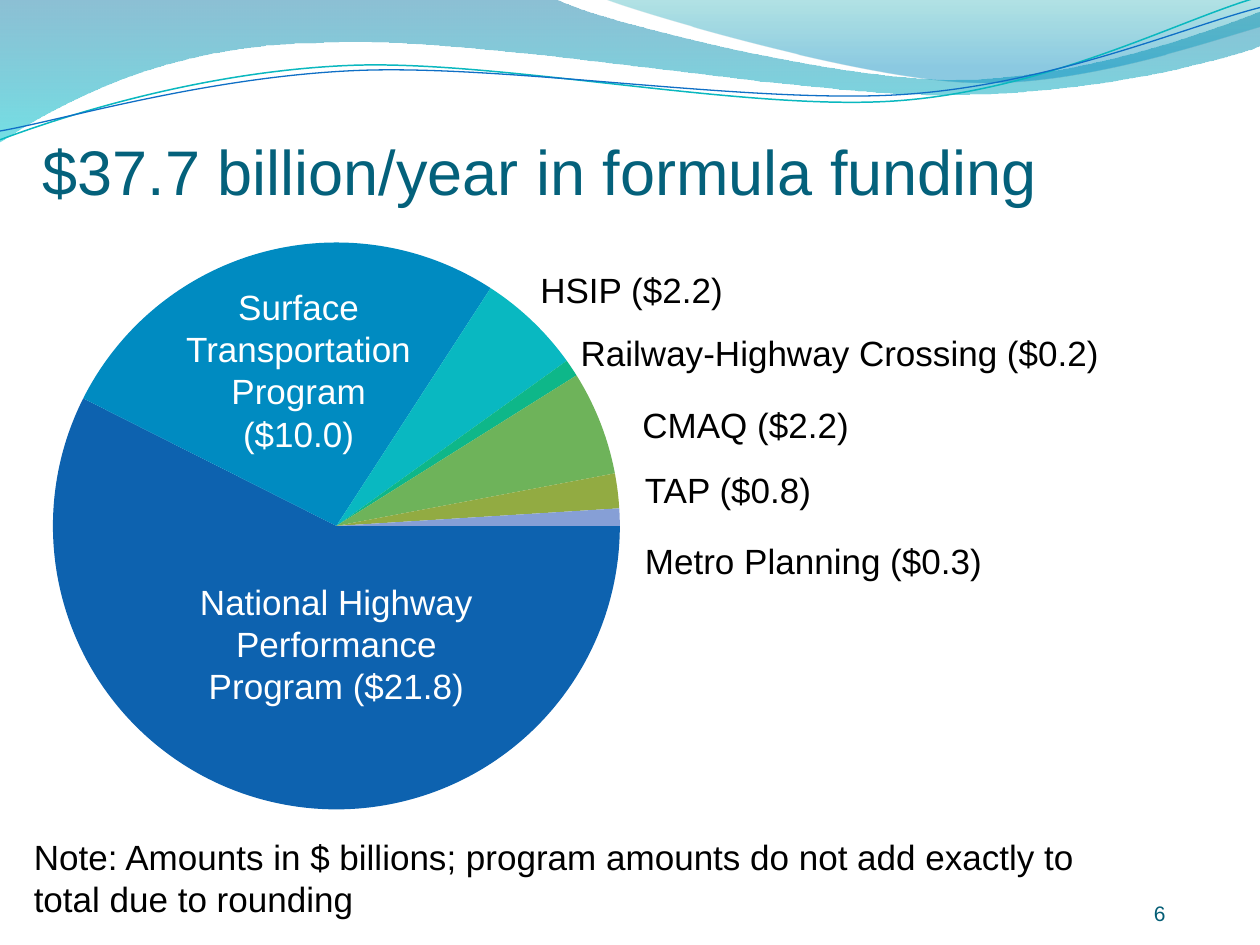
from dataclasses import dataclass

from lxml import etree
from pptx import Presentation
from pptx.chart.data import CategoryChartData
from pptx.dml.color import RGBColor
from pptx.enum.chart import XL_CHART_TYPE
from pptx.enum.text import MSO_ANCHOR, MSO_AUTO_SIZE, PP_ALIGN
from pptx.oxml.ns import qn
from pptx.util import Inches, Pt

Point = tuple[float, float]


@dataclass(frozen=True)
class Theme:
    font: str = "Arial"
    chart_font: str = "TeX Gyre Pagella"
    title: str = "04617B"
    number: str = "045D75"
    dark: str = "000000"
    light: str = "FFFFFF"
    title_size: int = 36
    body_size: int = 20
    chart_size: int = 18
    number_size: int = 12


@dataclass(frozen=True)
class Stop:
    color: str
    opacity: int
    position: float


@dataclass(frozen=True)
class Wave:
    """A start point followed by segments: one point is a line, three a curve."""
    start: Point
    segments: list[tuple[Point, ...]]
    stops: tuple[Stop, ...] = ()
    line: str = ""
    width: float = 0


@dataclass(frozen=True)
class Label:
    text: str
    left: float
    top: float
    width: float
    height: float = 0.44
    color: str = Theme.dark
    align: PP_ALIGN = PP_ALIGN.LEFT


@dataclass(frozen=True)
class Slice:
    share: int
    color: str


THEME = Theme()
UNITS_PER_INCH = 100

WAVES = [
    Wave((0, -0.01), [
        ((4.4, -0.01),),
        ((4.76, 0.17), (6.64, 0.63), (7.58, 0.63)),
        ((8.53, 0.63), (9.58, 0.26), (10, 0.09)),
        ((10.01, 0.36),),
        ((9.83, 0.44), (8.7, 0.76), (7.46, 0.75)),
        ((6.22, 0.75), (3.82, 0.28), (2.57, 0.34)),
        ((1.29, 0.35), (0.46, 0.83), (-0.01, 1.13)),
        ((0, -0.01),),
    ], stops=(Stop("0074A1", 45, 0), Stop("00C6CF", 55, 1))),
    Wave((4.79, -0.01), [
        ((5.09, 0.11), (6.82, 0.62), (7.69, 0.65)),
        ((8.56, 0.69), (9.61, 0.32), (10, 0.21)),
        ((10, 0),),
        ((4.79, -0.01),),
    ], stops=(Stop("00A1A9", 30, 0), Stop("008BBF", 45, 0.8))),
    Wave((0, 1.11), [
        ((0.48, 0.93), (1.58, 0.57), (2.77, 0.52)),
        ((3.95, 0.47), (5.93, 0.89), (7.13, 0.8)),
        ((8.33, 0.71), (9.38, 0.15), (9.98, -0.02)),
    ], line="0AB8BF", width=0.85),
    Wave((0, 1.04), [
        ((0.47, 0.96), (1.64, 0.61), (2.83, 0.56)),
        ((4.03, 0.51), (5.97, 0.83), (7.17, 0.75)),
        ((8.36, 0.67), (9.41, 0.21), (10, 0.06)),
    ], line="0F6FC6", width=0.75),
]

SLICES = [
    Slice(58, "0D62AF"), Slice(27, "008BC1"), Slice(6, "09B8C1"),
    Slice(1, "0EB789"), Slice(6, "6EB35A"), Slice(2, "92AB42"),
    Slice(1, "869FD6"),
]

LABELS = [
    Label("National Highway Performance Program ($21.8)", 1.38, 4.56, 2.58, 1.11,
          THEME.light, PP_ALIGN.CENTER),
    Label("Surface Transportation\nProgram ($10.0)", 1.33, 2.22, 2.08, 1.45,
          THEME.light, PP_ALIGN.CENTER),
    Label("HSIP ($2.2)", 4.19, 2.08, 1.9),
    Label("CMAQ ($2.2)", 5, 3.15, 2),
    Label("TAP ($0.8)", 5.02, 3.67, 4.73),
    Label("Metro Planning ($0.3)", 5.02, 4.23, 4.31),
    Label("Note: Amounts in $ billions; program amounts do not add exactly to "
          "total due to rounding", 0.17, 6.58, 8.5, 0.77),
    Label("Railway-Highway Crossing ($0.2)", 4.51, 2.58, 4.58),
]


def to_units(point: Point) -> Point:
    return tuple(round(value * UNITS_PER_INCH) for value in point)


def bend_segments(shape, wave: Wave) -> None:
    """Turn the straight segments that have control points into curves."""
    anchors = [to_units(p) for p in (wave.start, *(s[-1] for s in wave.segments))]
    left, top = (min(values) for values in zip(*anchors))
    lines = list(shape.element.iter(qn("a:lnTo")))
    for line, segment in zip(lines, wave.segments):
        if len(segment) == 1:
            continue
        curve = etree.Element(qn("a:cubicBezTo"))
        for x, y in map(to_units, segment):
            etree.SubElement(curve, qn("a:pt"), x=str(x - left), y=str(y - top))
        line.getparent().replace(line, curve)


def draw_wave(page, wave: Wave) -> None:
    builder = page.shapes.build_freeform(*to_units(wave.start),
                                         scale=Inches(1) / UNITS_PER_INCH)
    builder.add_line_segments([to_units(s[-1]) for s in wave.segments],
                              close=bool(wave.stops))
    shape = builder.convert_to_shape()
    bend_segments(shape, wave)
    shape.shadow.inherit = False
    if not wave.stops:
        shape.fill.background()
        shape.line.color.rgb = RGBColor.from_string(wave.line)
        shape.line.width = Pt(wave.width)
        return
    shape.line.fill.background()
    shape.fill.gradient()
    shape.fill.gradient_angle = 270
    for target, stop in zip(shape.fill.gradient_stops, wave.stops):
        target.color.rgb = RGBColor.from_string(stop.color)
        target.position = stop.position
    for color, stop in zip(shape.element.spPr.iter(qn("a:srgbClr")), wave.stops):
        etree.SubElement(color, qn("a:alpha"), val=str(stop.opacity * 1000))


def write_text(box, text: str, size: int, color: str,
               align: PP_ALIGN = PP_ALIGN.LEFT, **frame_format) -> None:
    frame = box.text_frame
    settings = {"word_wrap": True, "auto_size": MSO_AUTO_SIZE.NONE, **frame_format}
    for name, value in settings.items():
        setattr(frame, name, value)
    para = frame.paragraphs[0]
    para.text = text
    para.alignment = align
    for span in para.runs:
        span.font.name = THEME.font
        span.font.size = Pt(size)
        span.font.color.rgb = RGBColor.from_string(color)


def draw_label(page, label: Label) -> None:
    place = map(Inches, (label.left, label.top, label.width, label.height))
    write_text(page.shapes.add_textbox(*place), label.text, THEME.body_size,
               label.color, label.align)


def draw_pie(page) -> None:
    data = CategoryChartData()
    data.categories = [str(number) for number in range(1, len(SLICES) + 1)]
    data.add_series("Series 1", [piece.share for piece in SLICES])
    place = map(Inches, (0.17, 1.77, 5, 4.81))
    chart = page.shapes.add_chart(XL_CHART_TYPE.PIE, *place, data).chart
    chart.has_legend = chart.has_title = False
    chart.font.name = THEME.chart_font
    chart.font.size = Pt(THEME.chart_size)
    chart.font.color.rgb = RGBColor.from_string(THEME.dark)
    plot = chart.plots[0]
    plot.vary_by_categories = True
    for index, piece in enumerate(SLICES):
        fill = plot.series[0].points[index].format.fill
        fill.solid()
        fill.fore_color.rgb = RGBColor.from_string(piece.color)

    area = chart.element.find(".//" + qn("c:plotArea"))
    pie = area.find(qn("c:pieChart"))
    for parent, tag in ((pie, "c:firstSliceAng"), (area, "c:layout")):
        for old in parent.findall(qn(tag)):
            parent.remove(old)
    etree.SubElement(pie, qn("c:firstSliceAng"), val="90")
    layout = etree.Element(qn("c:layout"))
    area.insert(0, layout)
    manual = etree.SubElement(layout, qn("c:manualLayout"))
    for tag, value in {"layoutTarget": "inner", "xMode": "edge", "yMode": "edge",
                       "x": "0.05", "y": "0.03", "w": "0.9", "h": "0.94"}.items():
        etree.SubElement(manual, qn(f"c:{tag}"), val=value)


def main() -> None:
    deck = Presentation()
    deck.slide_width, deck.slide_height = Inches(10), Inches(7.5)
    page = deck.slides.add_slide(deck.slide_layouts[5])
    for wave in WAVES:
        draw_wave(page, wave)

    title = page.shapes.title
    title.left, title.top, title.width, title.height = map(Inches, (0.34, 1, 9.5, 0.83))
    write_text(title, "$37.7 billion/year in formula funding", THEME.title_size,
               THEME.title, vertical_anchor=MSO_ANCHOR.TOP, margin_left=0,
               margin_right=0, margin_top=Inches(0.05), margin_bottom=0)

    draw_pie(page)
    number = page.shapes.add_textbox(*map(Inches, (8.42, 6.95, 0.83, 0.4)))
    write_text(number, "6", THEME.number_size, THEME.number, PP_ALIGN.RIGHT,
               vertical_anchor=MSO_ANCHOR.BOTTOM, margin_left=0, margin_right=0,
               margin_top=0, margin_bottom=0)
    for label in LABELS:
        draw_label(page, label)
    deck.save("out.pptx")


if __name__ == "__main__":
    main()
